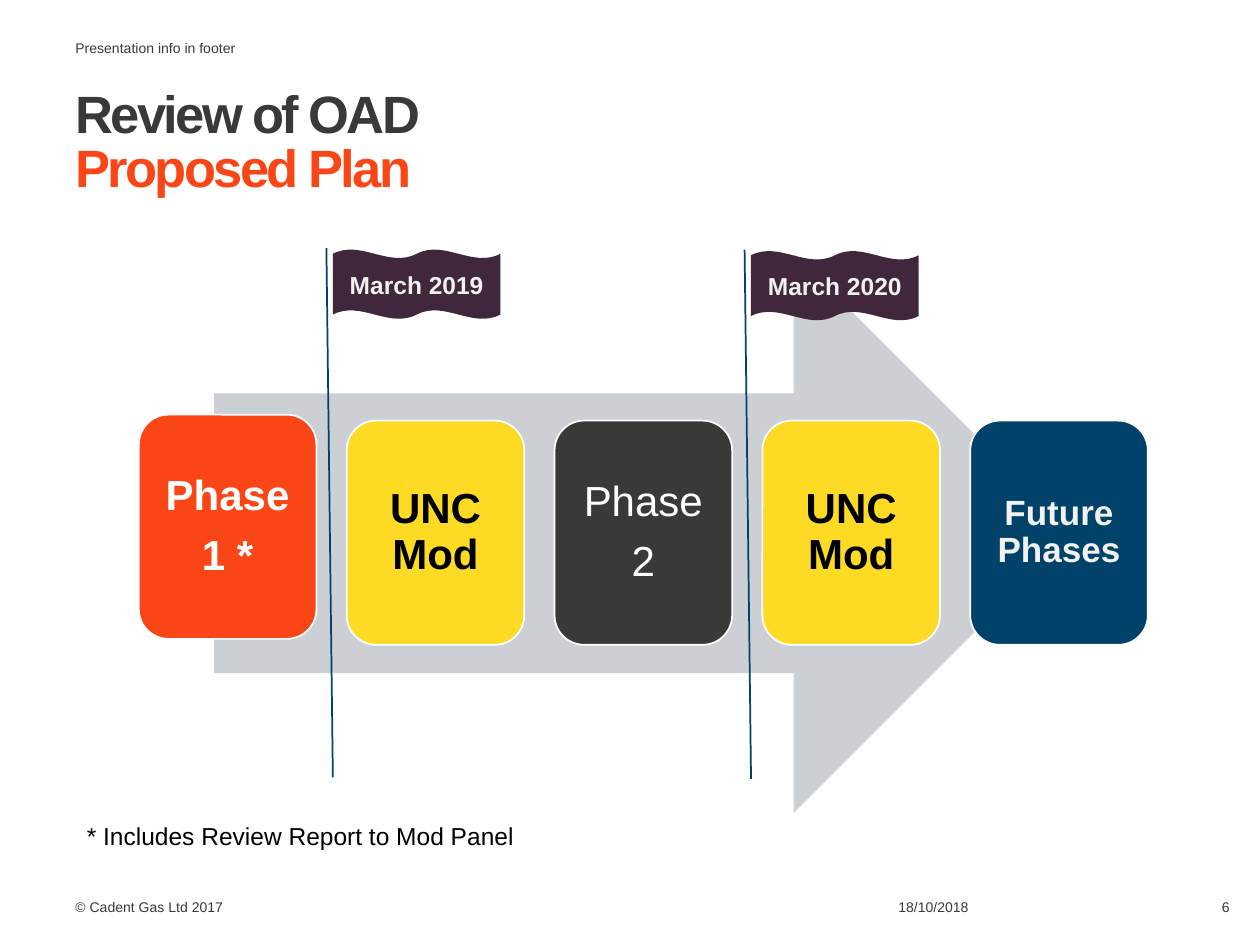
from pptx import Presentation
from pptx.dml.color import RGBColor as RGB
from pptx.enum.shapes import MSO_CONNECTOR as LINE, MSO_SHAPE as SHAPE
from pptx.enum.text import MSO_ANCHOR as ANCHOR, PP_ALIGN as ALIGN
from pptx.oxml.ns import qn
from pptx.util import Cm, Pt
from lxml import etree

COLORS = {
    "white": "FFFFFF", "black": "000000", "dark": "373A36", "orange": "FA4616",
    "yellow": "FDDA24", "blue": "00426A", "gray": "CCCFD4", "plum": "41273B",
    "pale": "F2F2F2",
}

deck = Presentation()
deck.slide_width, deck.slide_height = Cm(25.4), Cm(19.05)
slide = deck.slides.add_slide(deck.slide_layouts[6])
shapes = slide.shapes


def write(shape, text, size, color, bold=False, align=ALIGN.LEFT,
          anchor=ANCHOR.TOP, inset=0, wrap=True):
    """Fill the shape's text frame and format every run alike."""
    frame = shape.text_frame
    frame.text = text
    frame.word_wrap = wrap
    frame.vertical_anchor = anchor
    frame.margin_left = frame.margin_right = Cm(inset)
    frame.margin_top = frame.margin_bottom = Cm(inset)
    for para in frame.paragraphs:
        para.alignment = align
        for run in para.runs:
            font = run.font
            font.name, font.size, font.bold = "Arial", Pt(size), bold
            font.color.rgb = RGB.from_string(COLORS[color])
    return frame


def draw(kind, left, top, width, height, fill, line=None):
    shape = shapes.add_shape(kind, Cm(left), Cm(top), Cm(width), Cm(height))
    shape.shadow.inherit = False
    shape.fill.solid()
    shape.fill.fore_color.rgb = RGB.from_string(COLORS[fill])
    if line:
        shape.line.color.rgb = RGB.from_string(COLORS[line])
        shape.line.width = Pt(1)
    else:
        shape.line.fill.background()
    return shape


# Header and footer
labels = [
    ("Presentation info in footer", 1.52, 0.79, 11.79, ALIGN.LEFT, ANCHOR.TOP),
    ("© Cadent Gas Ltd 2017", 1.52, 17.7, 5.05, ALIGN.LEFT, ANCHOR.BOTTOM),
    ("18/10/2018", 18.11, 17.7, 2.9, ALIGN.LEFT, ANCHOR.BOTTOM),
    ("6", 22.99, 17.7, 1.8, ALIGN.RIGHT, ANCHOR.BOTTOM),
]
for text, left, top, width, align, anchor in labels:
    box = shapes.add_textbox(Cm(left), Cm(top), Cm(width), Cm(0.76))
    write(box, text, 8, "dark", align=align, anchor=anchor)

# Title
title = shapes.add_textbox(Cm(1.52), Cm(1.83), Cm(16.59), Cm(3.68))
para = write(title, "Review of OAD\vProposed Plan", 30, "dark", True).paragraphs[0]
para.line_spacing = 0.85
for run in para.runs:
    run.font._element.set("spc", "-150")
para.runs[1].font.color.rgb = RGB.from_string(COLORS["orange"])

# Arrow with the phase cards
draw(SHAPE.RIGHT_ARROW, 4.32, 5.11, 17.32, 11.28, "gray")
cards = [
    ("Phase\n1 *", "orange", "white", 24, True, 8.36),
    ("UNC Mod", "yellow", "black", 24, True, 8.48),
    ("Phase\n2", "dark", "white", 24, False, 8.48),
    ("UNC Mod", "yellow", "black", 24, True, 8.48),
    ("Future Phases", "blue", "pale", 20, True, 8.48),
]
for i, (text, fill, color, size, bold, top) in enumerate(cards):
    card = draw(SHAPE.ROUNDED_RECTANGLE, 2.8 + 4.19 * i, top, 3.58, 4.52, fill, "white")
    frame = write(card, text, size, color, bold, ALIGN.CENTER, ANCHOR.MIDDLE, 0.2)
    for para in frame.paragraphs:
        para.line_spacing = 0.9
    for para in frame.paragraphs[:-1]:
        para.space_after = Pt(0.35 * size)

# Date flags on their poles
for text, left, top in [("March 2019", 6.58, 5), ("March 2020", 15.01, 5.03)]:
    pole = shapes.add_connector(LINE.STRAIGHT, Cm(left), Cm(top),
                                Cm(left + 0.13), Cm(top + 10.67))
    pole.line.color.rgb = RGB.from_string(COLORS["blue"])
    pole.line.width = Pt(1)
    etree.SubElement(pole._element.spPr, qn("a:effectLst"))
    flag = draw(SHAPE.DOUBLE_WAVE, left + 0.13, top + 0.03, 3.38, 1.4, "plum")
    write(flag, text, 14, "pale", True, ALIGN.CENTER, ANCHOR.MIDDLE)

# Footnote
note = shapes.add_textbox(Cm(1.5), Cm(16.43), Cm(9.17), Cm(0.86))
write(note, "* Includes Review Report to Mod Panel", 14, "black", inset=0.25, wrap=False)
note.text_frame.margin_top = note.text_frame.margin_bottom = Cm(0.13)

deck.save("out.pptx")
